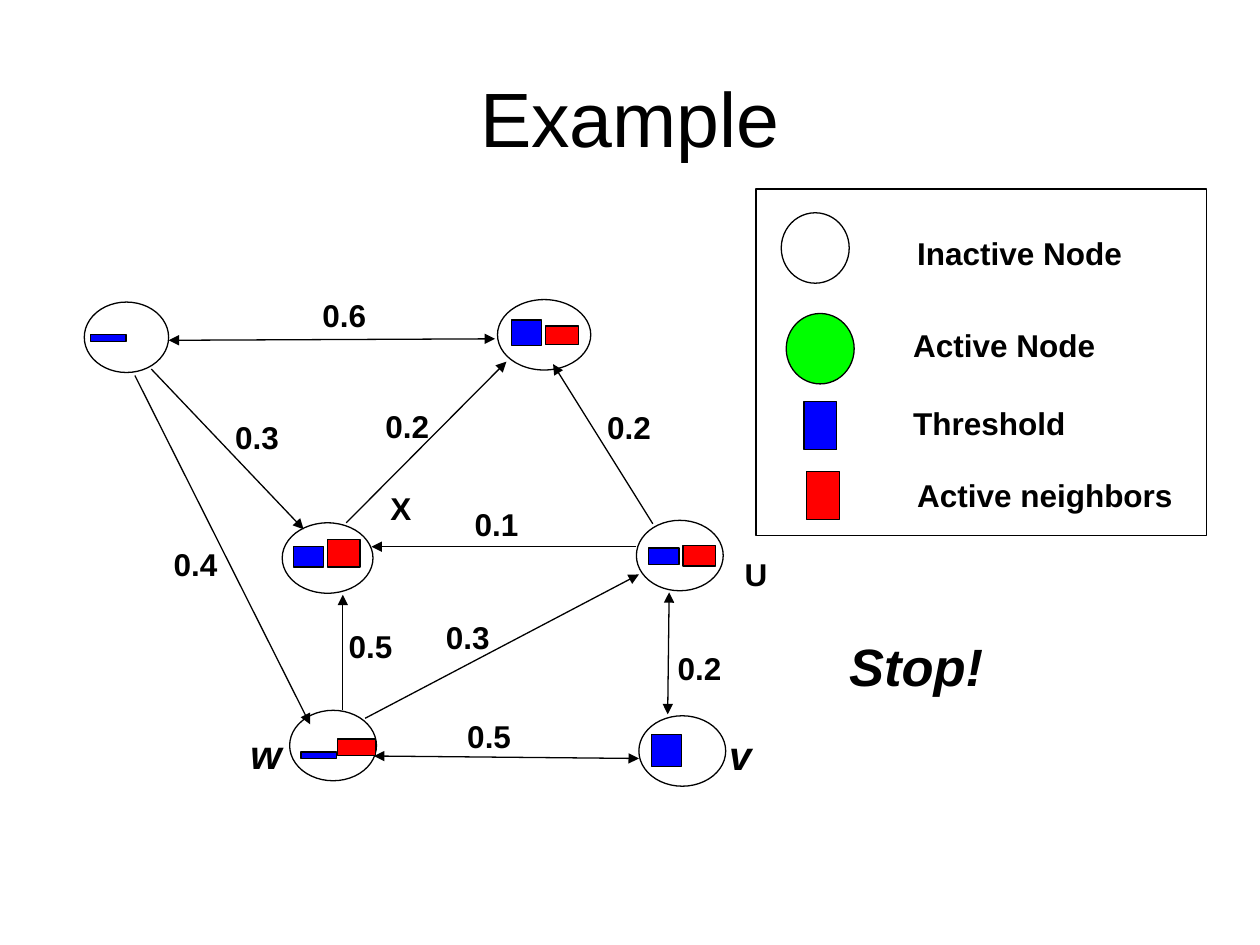
from lxml import etree
from pptx import Presentation
from pptx import util as u
from pptx.dml.color import RGBColor
from pptx.enum import shapes, text
from pptx.oxml.ns import qn

BLACK = RGBColor(0, 0, 0)
WHITE = RGBColor(255, 255, 255)
GREEN = RGBColor(0, 255, 0)
BLUE = RGBColor(0, 0, 255)
RED = RGBColor(255, 0, 0)
OVAL = shapes.MSO_SHAPE.OVAL
RECT = shapes.MSO_SHAPE.RECTANGLE

# All lengths are in cm; nodes, edges and names are relative to the graph box.
NODE_H = 1.42
# x, y, width, fill, bars (colour, x, y, width, height relative to the node)
NODES = [
    (0, 0.25, 1.7, WHITE, [(BLUE, 0.13, 0.66, 0.71, 0.13)]),
    (8.33, 0.2, 1.88, WHITE, [(BLUE, 0.28, 0.41, 0.61, 0.51),
                              (RED, 0.97, 0.53, 0.66, 0.38)]),
    (3.99, 4.7, 1.83, WHITE, [(BLUE, 0.23, 0.48, 0.61, 0.41),
                              (RED, 0.91, 0.33, 0.66, 0.56)]),
    (11.13, 4.65, 1.75, WHITE, [(BLUE, 0.25, 0.56, 0.61, 0.33),
                                (RED, 0.94, 0.51, 0.66, 0.41)]),
    (4.14, 8.48, 1.75, WHITE, [(BLUE, 0.23, 0.84, 0.71, 0.13),
                               (RED, 0.97, 0.58, 0.76, 0.33)]),
    (11.18, 8.59, 1.75, None, [(BLUE, 0.25, 0.38, 0.61, 0.64)]),
]
# start, end, both ways, weight, weight position
EDGES = [
    ((5.84, 9.4), (11.18, 9.45), True, "0.5", (7.47, 8.48)),
    ((5.66, 8.64), (11.18, 5.74), False, "0.3", (7.04, 6.5)),
    ((5.21, 8.48), (5.21, 6.15), False, "0.5", (5.08, 6.68)),
    ((11.13, 5.18), (5.79, 5.18), False, "0.1", (7.62, 4.22)),
    ((1.02, 1.73), (4.55, 8.76), False, "0.4", (1.55, 5.03)),
    ((1.35, 1.6), (4.42, 4.83), False, "0.3", (2.79, 2.46)),
    ((5.28, 4.7), (8.51, 1.45), False, "0.2", (5.82, 2.24)),
    ((1.7, 1.02), (8.28, 0.99), True, "0.6", (4.55, 0)),
    ((11.46, 4.72), (9.45, 1.5), False, "0.2", (10.29, 2.26)),
    ((11.79, 6.1), (11.76, 8.56), True, "0.2", (11.71, 7.11)),
]
# name, x, y, width, height, size, italic
NAMES = [
    ("v", 12.75, 8.76, 0.86, 1.22, 23, True),
    ("w", 3.1, 8.74, 0.97, 1.22, 23, True),
    ("U", 13.06, 5.23, 1.12, 1.02, 18, False),
    ("X", 5.92, 3.89, 1.12, 1.02, 18, False),
]
# symbol, fill, symbol box, wording, text x, y, width (relative to the legend)
LEGEND = [
    (OVAL, WHITE, (0.51, 0.48, 1.37, 1.42), "Inactive Node", 3, 0.79, 4.65),
    (OVAL, GREEN, (0.61, 2.51, 1.37, 1.42), "Active Node", 2.92, 2.64, 4.19),
    (RECT, BLUE, (0.97, 4.29, 0.66, 0.97), "Threshold", 2.92, 4.22, 3.58),
    (RECT, RED, (1.02, 5.69, 0.66, 0.97), "Active neighbors", 3, 5.66, 5.66),
]


def add_figure(s, kind, x, y, w, h, fill):
    sp = s.shapes.add_shape(kind, u.Cm(x), u.Cm(y), u.Cm(w), u.Cm(h))
    sp.shadow.inherit = False
    if fill is None:
        sp.fill.background()
    else:
        sp.fill.solid()
        sp.fill.fore_color.rgb = fill
    sp.line.color.rgb = BLACK
    sp.line.width = u.Pt(0.75)


def add_text(s, wording, x, y, w, h, size=18, bold=True, italic=False, wrap=True):
    tf = s.shapes.add_textbox(u.Cm(x), u.Cm(y), u.Cm(w), u.Cm(h)).text_frame
    tf.word_wrap = wrap
    tf.text = wording
    p = tf.paragraphs[0]
    font = p.runs[0].font
    font.name, font.size = "Arial", u.Pt(size)
    font.bold, font.italic = bold, italic
    font.color.rgb = BLACK
    return tf


def add_arrow(s, x1, y1, x2, y2, both):
    c = s.shapes.add_connector(shapes.MSO_CONNECTOR.STRAIGHT,
                               u.Cm(x1), u.Cm(y1), u.Cm(x2), u.Cm(y2))
    c.line.color.rgb = BLACK
    c.line.width = u.Pt(0.75)
    ln = c.line._get_or_add_ln()
    for end in ("a:headEnd", "a:tailEnd") if both else ("a:tailEnd",):
        etree.SubElement(ln, qn(end), type="triangle")
    etree.SubElement(c._element.spPr, qn("a:effectLst"))


def add_title(s, x, y, w, h):
    tf = add_text(s, "Example", x, y, w, h, size=44, bold=False)
    tf.vertical_anchor = text.MSO_ANCHOR.MIDDLE
    tf.paragraphs[0].alignment = text.PP_ALIGN.CENTER


def add_graph(s, left, top):
    # Nodes with their threshold and neighbour bars
    for x, y, w, fill, bars in NODES:
        add_figure(s, OVAL, left + x, top + y, w, NODE_H, fill)
        for color, dx, dy, bw, bh in bars:
            add_figure(s, RECT, left + x + dx, top + y + dy, bw, bh, color)
    # Weighted edges
    for (x1, y1), (x2, y2), both, weight, (tx, ty) in EDGES:
        add_arrow(s, left + x1, top + y1, left + x2, top + y2, both)
        add_text(s, weight, left + tx, top + ty, 1.7, 1.02)
    # Node names
    for name, x, y, w, h, size, italic in NAMES:
        add_text(s, name, left + x, top + y, w, h, size, italic=italic)


def add_legend(s, left, top, w, h):
    add_figure(s, RECT, left, top, w, h, None)
    for kind, fill, (x, y, sw, sh), wording, tx, ty, tw in LEGEND:
        add_figure(s, kind, left + x, top + y, sw, sh, fill)
        add_text(s, wording, left + tx, top + ty, tw, 1.02, wrap=False)


def main():
    prs = Presentation()
    prs.slide_width, prs.slide_height = u.Cm(25.4), u.Cm(19.05)
    s = prs.slides.add_slide(prs.slide_layouts[6])
    add_title(s, 1.27, 0.76, 22.86, 3.18)
    add_legend(s, 15.24, 3.81, 9.09, 6.99)
    add_graph(s, 1.7, 5.84)
    # Closing remark
    add_text(s, "Stop!", 16.87, 12.65, 3.63, 1.52, size=30, italic=True)
    prs.save("out.pptx")


if __name__ == "__main__":
    main()
